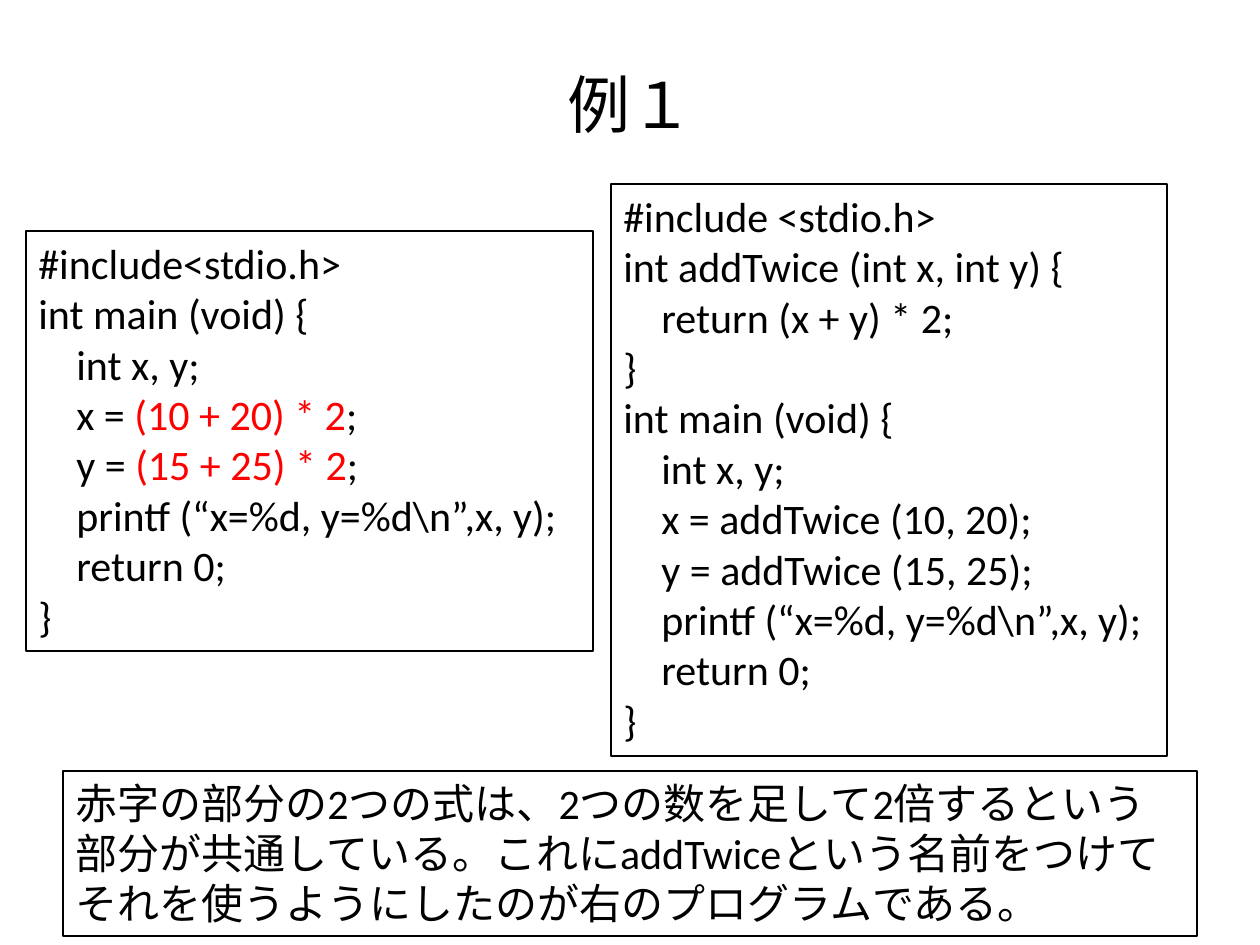
"""Build a slide comparing a C program before and after extracting a function."""
from pptx import Presentation
from pptx.dml.color import RGBColor
from pptx.enum.text import MSO_ANCHOR, PP_ALIGN
from pptx.util import Pt

TITLE = "例１"
PRINT = (1, "printf (“x=%d, y=%d\\n”,x, y);")
INLINE_CODE = [
    (0, "#include<stdio.h>"),
    (0, "int main (void) {"),
    (1, "int x, y;"),
    (1, "x = ", "(10 + 20) * 2", ";"),
    (1, "y = ", "(15 + 25) * 2", ";"),
    PRINT,
    (1, "return 0;"),
    (0, "}"),
]
FUNCTION_CODE = [
    (0, "#include <stdio.h>"),
    (0, "int addTwice (int x, int y) {"),
    (1, "return (x + y) * 2;"),
    (0, "}"),
    (0, "int main (void) {"),
    (1, "int x, y;"),
    (1, "x = addTwice (10, 20);"),
    (1, "y = addTwice (15, 25);"),
    PRINT,
    (1, "return 0;"),
    (0, "}"),
]
NOTE = [(0, "赤字の部分の2つの式は、2つの数を足して2倍するという部分が共通している。"
            "これにaddTwiceという名前をつけてそれを使うようにしたのが右のプログラムである。")]
BOXES = [
    (FUNCTION_CODE, (611, 184, 556, 572)),
    (NOTE, (63, 771, 1134, 165)),
    (INLINE_CODE, (26, 231, 567, 420)),
]
TITLE_AREA = (63, 24, 1134, 158)
INDENT = 38
COLORS = {"text": "000000", "accent": "FF0000", "line": "000000"}
FONT = "Calibri"


def px(n):
    return round(n * 914400 / 126)


def color(name):
    return RGBColor.from_string(COLORS[name])


def style(font, size):
    font.name = FONT
    font.size = Pt(size)
    font.color.rgb = color("text")


def add_box(s, lines, area):
    sp = s.shapes.add_textbox(*map(px, area))
    sp.line.color.rgb = color("line")
    sp.line.width = Pt(0.75)
    tf = sp.text_frame
    tf.word_wrap = True
    for i, (level, *parts) in enumerate(lines):
        p = tf.paragraphs[0] if i == 0 else tf.add_paragraph()
        style(p.font, 24)
        p._p.get_or_add_pPr().set("marL", str(px(INDENT * level)))
        for j, part in enumerate(parts):
            r = p.add_run()
            r.text = part
            style(r.font, 24)
            if j == 1:
                r.font.color.rgb = color("accent")


def main():
    prs = Presentation()
    prs.slide_width, prs.slide_height = px(1260), px(945)
    s = prs.slides.add_slide(prs.slide_layouts[5])
    title = s.shapes.title
    title.left, title.top, title.width, title.height = map(px, TITLE_AREA)
    tf = title.text_frame
    tf.text = TITLE
    tf.vertical_anchor = MSO_ANCHOR.MIDDLE
    p = tf.paragraphs[0]
    p.alignment = PP_ALIGN.CENTER
    style(p.font, 36)
    for lines, area in BOXES:
        add_box(s, lines, area)
    prs.save("out.pptx")


if __name__ == "__main__":
    main()
